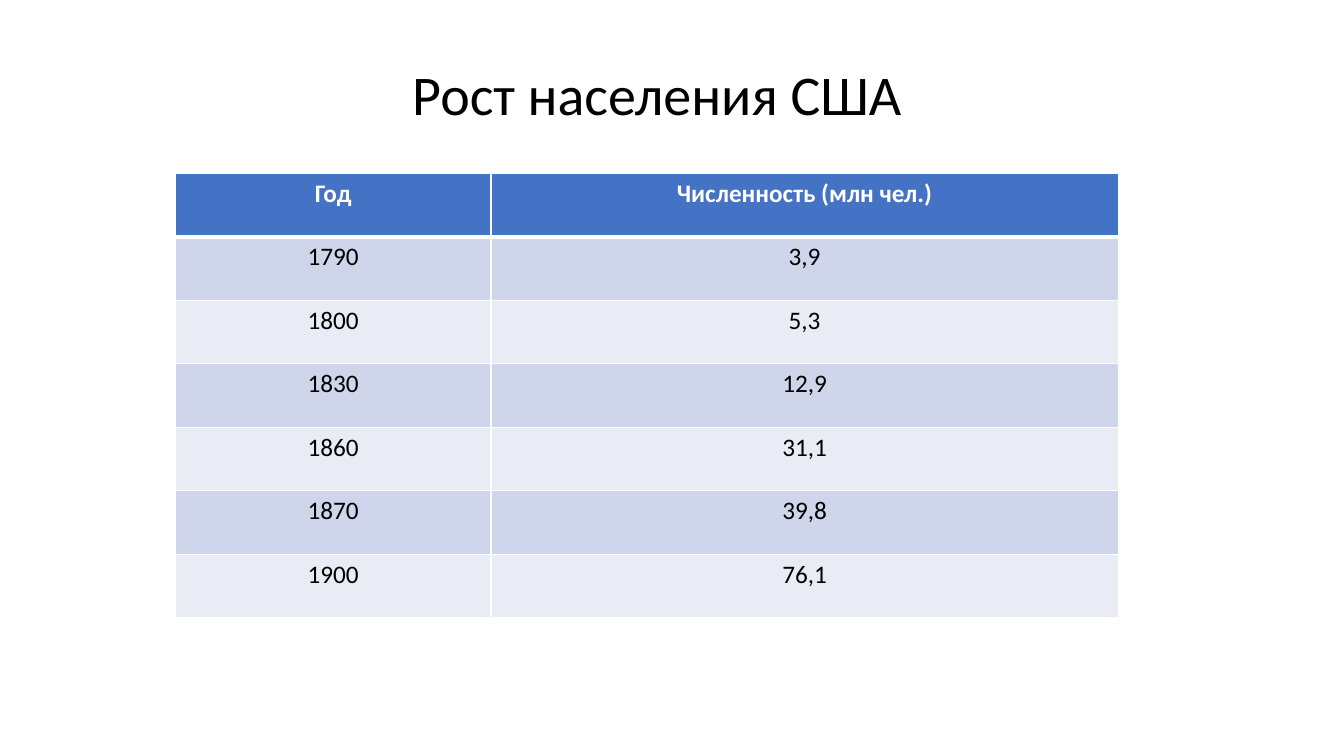
from dataclasses import dataclass

from lxml.etree import SubElement
from pptx import Presentation
from pptx.dml.color import RGBColor
from pptx.enum.text import MSO_ANCHOR, PP_ALIGN
from pptx.oxml.ns import qn
from pptx.util import Inches, Pt


@dataclass(frozen=True)
class Theme:
    font: str = "Calibri"
    title_size: int = 40
    table_size: int = 18
    text: str = "000000"
    header_text: str = "FFFFFF"
    header_fill: str = "4472C4"
    bands: tuple = ("CFD5EA", "E9EBF5")
    border: str = "FFFFFF"
    border_width: int = 1
    header_rule_width: int = 3


HEADER = ("Год", "Численность (млн чел.)")
POPULATION = (
    ("1790", "3,9"),
    ("1800", "5,3"),
    ("1830", "12,9"),
    ("1860", "31,1"),
    ("1870", "39,8"),
    ("1900", "76,1"),
)


class SlideBuilder:
    def __init__(self, slide, theme):
        self.slide = slide
        self.theme = theme

    def centred_run(self, frame, text, size, color, bold=False):
        paragraph = frame.paragraphs[0]
        paragraph.alignment = PP_ALIGN.CENTER
        run = paragraph.add_run()
        run.text = text
        run.font.name = self.theme.font
        run.font.size = Pt(size)
        run.font.bold = bold
        run.font.color.rgb = RGBColor.from_string(color)

    def title(self, text, left, top, width, height):
        heading = self.slide.shapes.title
        heading.left, heading.top = Inches(left), Inches(top)
        heading.width, heading.height = Inches(width), Inches(height)
        heading.text_frame.word_wrap = True
        heading.text_frame.vertical_anchor = MSO_ANCHOR.TOP
        self.centred_run(heading.text_frame, text, self.theme.title_size, self.theme.text)

    def border(self, cell, side, width):
        properties = cell._tc.get_or_add_tcPr()
        line = SubElement(properties, qn(f"a:ln{side}"), w=str(Pt(width)))
        fill = SubElement(line, qn("a:solidFill"))
        SubElement(fill, qn("a:srgbClr"), val=self.theme.border)

    def cell(self, cell, text, row):
        theme = self.theme
        is_header = row == 0
        for side in "LRTB":
            touches_rule = (row, side) in ((0, "B"), (1, "T"))
            self.border(cell, side, theme.header_rule_width if touches_rule else theme.border_width)
        fill = theme.header_fill if is_header else theme.bands[(row - 1) % 2]
        cell.fill.solid()
        cell.fill.fore_color.rgb = RGBColor.from_string(fill)
        color = theme.header_text if is_header else theme.text
        self.centred_run(cell.text_frame, text, theme.table_size, color, is_header)

    def table(self, records, left, top, column_widths, row_height):
        table = self.slide.shapes.add_table(
            len(records), len(column_widths), Inches(left), Inches(top),
            Inches(sum(column_widths)), Inches(row_height * len(records)),
        ).table
        for column, width in zip(table.columns, column_widths):
            column.width = Inches(width)
        for index, record in enumerate(records):
            table.rows[index].height = Inches(row_height)
            for position, text in enumerate(record):
                self.cell(table.cell(index, position), text, index)


def main():
    presentation = Presentation()
    presentation.slide_width = Inches(13.33)
    presentation.slide_height = Inches(7.5)
    title_only = presentation.slide_layouts[5]
    builder = SlideBuilder(presentation.slides.add_slide(title_only), Theme())
    builder.title("Рост населения США", 2.29, 0.54, 8.45, 0.77)
    builder.table((HEADER, *POPULATION), 1.74, 1.72, (3.13, 6.22), 0.63)
    presentation.save("out.pptx")


if __name__ == "__main__":
    main()
